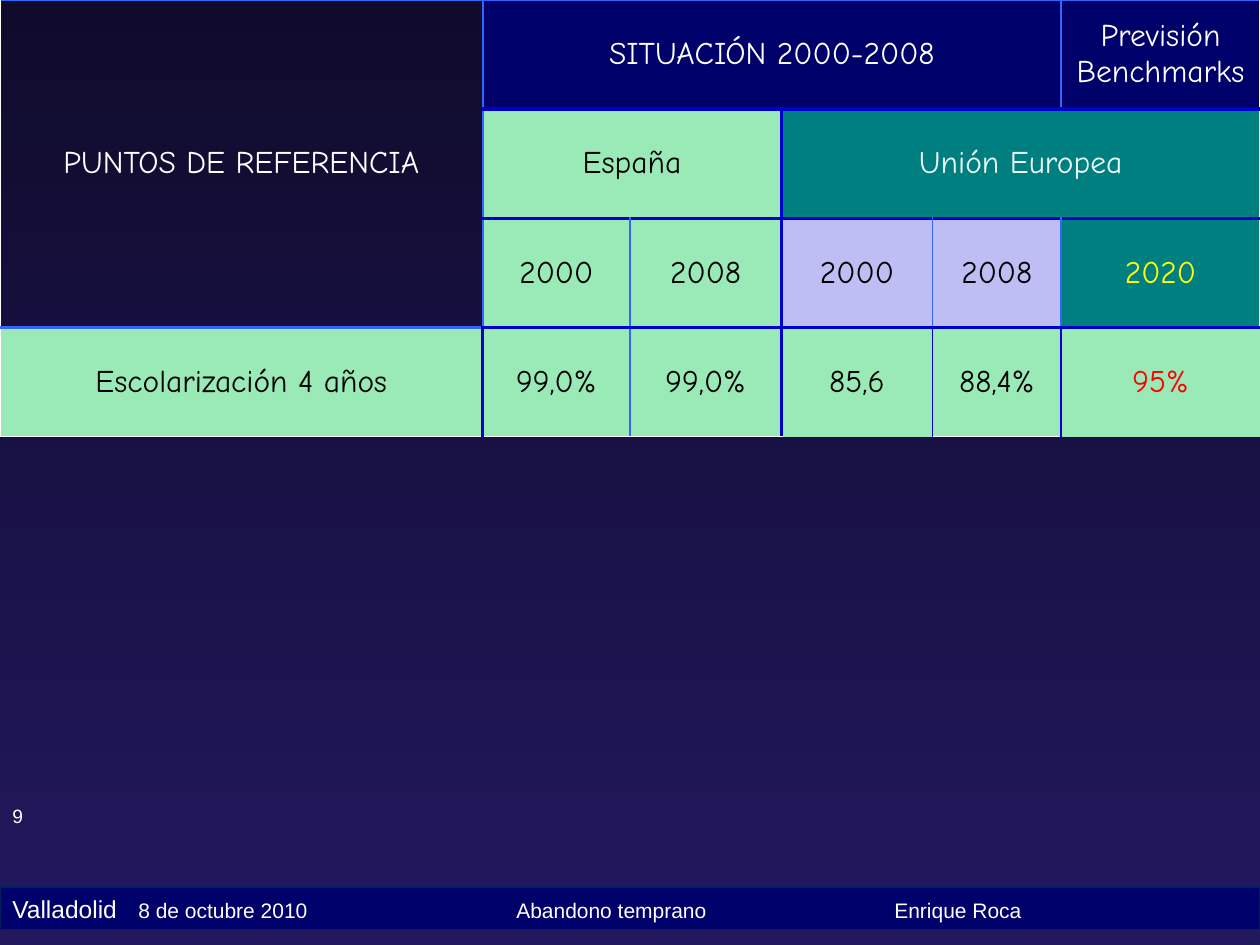
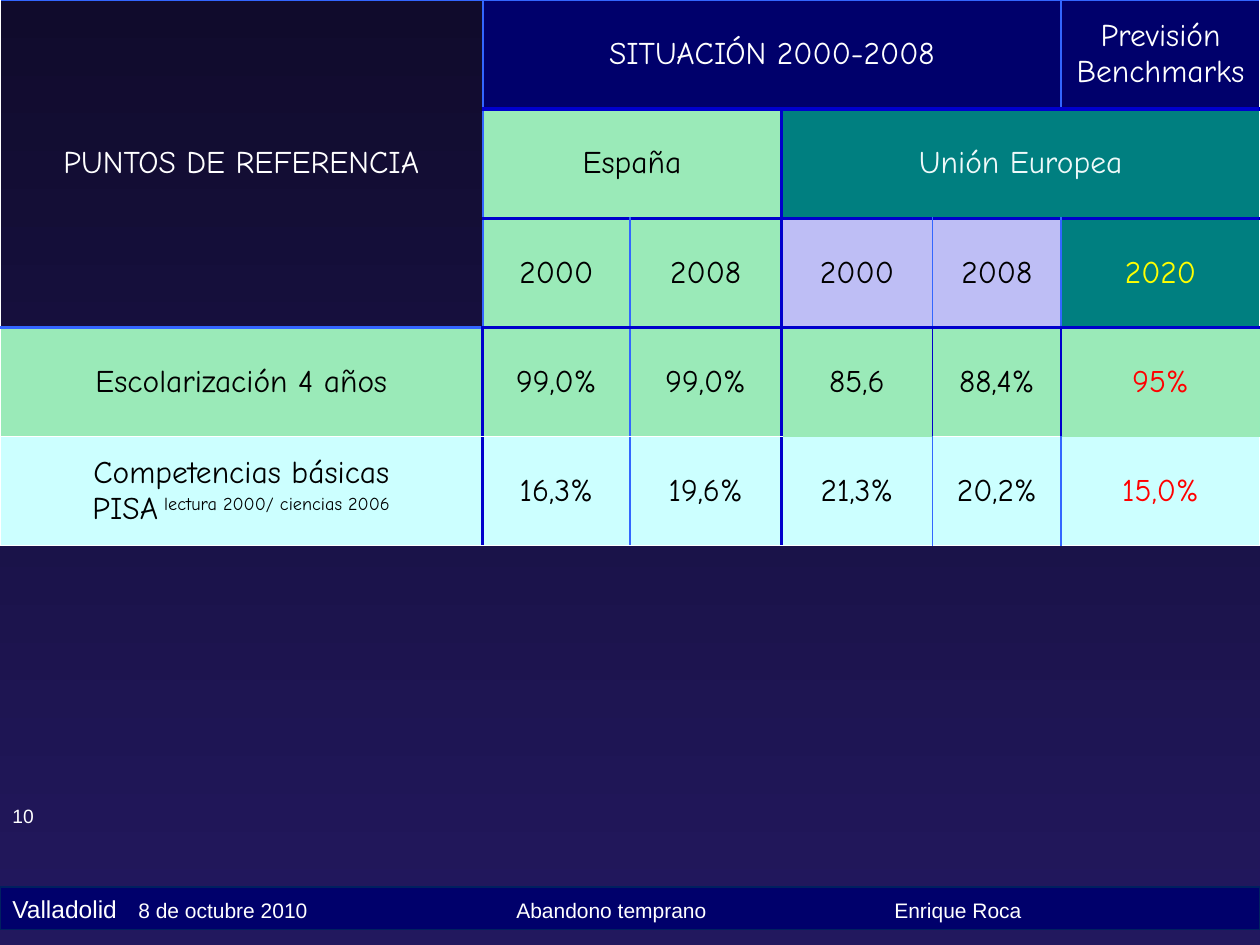
import dataclasses

import lxml.etree
import pptx
import pptx.dml.color
import pptx.enum.shapes
import pptx.enum.text
import pptx.oxml.ns
import pptx.util

Cm = pptx.util.Cm
Pt = pptx.util.Pt
Align = pptx.enum.text.PP_ALIGN
Anchor = pptx.enum.text.MSO_ANCHOR


@dataclasses.dataclass(frozen=True)
class Theme:
    night_top: str = "100B2C"
    night_bottom: str = "22185E"
    navy: str = "00006B"
    band_edge: str = "002060"
    green: str = "9AEAB8"
    teal: str = "007F80"
    lilac: str = "BEBEF5"
    ice: str = "CCFFFF"
    azure: str = "3366FF"
    blue: str = "0000CC"
    white: str = "FFFFFF"
    pale: str = "EEF9F9"
    black: str = "000000"
    yellow: str = "FFFF00"
    red: str = "FF0000"
    sans: str = "Arial"
    comic: str = "Comic Neue"
    table_size: int = 18
    place_size: int = 14
    footer_size: int = 12
    number_size: int = 11


THEME = Theme()


@dataclasses.dataclass(frozen=True)
class Entry:
    """Table cell content; each line is a list of (text, is_superscript) runs."""
    row: int
    col: int
    lines: list
    fill: str = None
    ink: str = THEME.black
    rows: int = 1
    cols: int = 1


PENS = {
    "W": (THEME.white, 1),
    "A": (THEME.azure, 1.5),
    "a": (THEME.azure, 1),
    "B": (THEME.blue, 2.25),
    "b": (THEME.blue, 1),
    "-": None,
}
# One letter per grid line: vertical lines by row, horizontal lines by column.
VERTICALS = ["WA---AW", "WA-B--W", "WAaBaAW", "WBaBbb-", "WBaBaAW"]
HORIZONTALS = ["AAAAAA", "-BBBBB", "-BBBBB", "ABBBBB", "WWW-W-", "WWWWWW"]

COLUMN_WIDTHS = [9.73, 2.97, 3.05, 3.05, 2.59, 4.01]
ROW_HEIGHT = 2.2


def plain(*lines):
    return [[(line, False)] for line in lines]


HEADINGS = [
    Entry(0, 0, plain("PUNTOS DE REFERENCIA"), ink=THEME.white, rows=3),
    Entry(0, 1, plain("SITUACIÓN 2000-2008"), THEME.navy, THEME.white, cols=4),
    Entry(0, 5, plain("Previsión", "Benchmarks"), THEME.navy, THEME.white),
    Entry(1, 1, plain("España"), THEME.green, cols=2),
    Entry(1, 3, plain("Unión Europea"), THEME.teal, THEME.pale, cols=3),
    Entry(2, 1, plain("2000"), THEME.green),
    Entry(2, 2, plain("2008"), THEME.green),
    Entry(2, 3, plain("2000"), THEME.lilac),
    Entry(2, 4, plain("2008"), THEME.lilac),
    Entry(2, 5, plain("2020"), THEME.teal, THEME.yellow),
]


def indicator(row, label, values, fill):
    """Entries of one indicator row, with the 2020 target in red."""
    inks = [THEME.black] * (len(values) - 1) + [THEME.red]
    return [Entry(row, 0, label, fill)] + [
        Entry(row, col, plain(value), fill, ink)
        for col, (value, ink) in enumerate(zip(values, inks), start=1)
    ]


SCHOOLING = indicator(
    3, plain("Escolarización 4 años"),
    ["99,0%", "99,0%", "85,6", "88,4%", "95%"], THEME.green)
BASIC_SKILLS = indicator(
    4, plain("Competencias básicas")
    + [[("PISA", False), (" lectura 2000/ ciencias 2006", True)]],
    ["16,3%", "19,6%", "21,3%", "20,2%", "15,0%"], THEME.ice)


def rgb(colour):
    return pptx.dml.color.RGBColor.from_string(colour)


def add_text(paragraph, text, *, size, font=THEME.sans, ink=THEME.white,
             superscript=False):
    run = paragraph.add_run()
    run.text = text
    run.font.size = Pt(size)
    run.font.name = font
    run.font.color.rgb = rgb(ink)
    if superscript:
        run.font._element.set("baseline", "30000")


def add_element(parent, tag, **attributes):
    return lxml.etree.SubElement(
        parent, pptx.oxml.ns.qn(tag),
        {key: str(value) for key, value in attributes.items()})


def set_tab_stops(paragraph, positions):
    stops = add_element(paragraph._p.get_or_add_pPr(), "a:tabLst")
    for position in positions:
        add_element(stops, "a:tab", pos=int(Cm(position)), algn="l")


def set_borders(cell, pens):
    """Draw the left, right, top and bottom lines; must precede the fill."""
    properties = cell._tc.get_or_add_tcPr()
    for side, pen in zip("LRTB", pens):
        if pen is None:
            add_element(add_element(properties, f"a:ln{side}", w=0), "a:noFill")
            continue
        colour, width = pen
        line = add_element(properties, f"a:ln{side}", w=int(Pt(width)))
        add_element(add_element(line, "a:solidFill"), "a:srgbClr", val=colour)


def fill_entry(table, entry):
    cell = table.cell(entry.row, entry.col)
    cell.vertical_anchor = Anchor.MIDDLE
    cell.margin_left = cell.margin_right = Cm(0.08)
    cell.margin_top = cell.margin_bottom = 0
    for index, line in enumerate(entry.lines):
        frame = cell.text_frame
        paragraph = frame.add_paragraph() if index else frame.paragraphs[0]
        paragraph.alignment = Align.CENTER
        for text, superscript in line:
            add_text(paragraph, text, size=THEME.table_size, font=THEME.comic,
                     ink=entry.ink, superscript=superscript)


def paint_entry(table, entry):
    """Set borders and fill on every grid cell that the entry covers."""
    for row in range(entry.row, entry.row + entry.rows):
        for col in range(entry.col, entry.col + entry.cols):
            cell = table.cell(row, col)
            letters = (VERTICALS[row][col],
                       VERTICALS[row][col + cell.span_width],
                       HORIZONTALS[row][col],
                       HORIZONTALS[row + cell.span_height][col])
            set_borders(cell, [PENS[letter] for letter in letters])
            if entry.fill:
                cell.fill.solid()
                cell.fill.fore_color.rgb = rgb(entry.fill)
            else:
                cell.fill.background()


def add_benchmarks(slide, left, top, entries):
    row_count = max(entry.row + entry.rows for entry in entries)
    table = slide.shapes.add_table(
        row_count, len(COLUMN_WIDTHS), Cm(left), Cm(top),
        Cm(sum(COLUMN_WIDTHS)), Cm(ROW_HEIGHT * row_count)).table
    table.first_row = table.horz_banding = False
    for column, width in zip(table.columns, COLUMN_WIDTHS):
        column.width = Cm(width)
    for row in table.rows:
        row.height = Cm(ROW_HEIGHT)
    for entry in entries:
        if entry.rows * entry.cols > 1:
            table.cell(entry.row, entry.col).merge(table.cell(
                entry.row + entry.rows - 1, entry.col + entry.cols - 1))
        fill_entry(table, entry)
        paint_entry(table, entry)


def add_page_number(slide, left, top, width, height, number):
    frame = slide.shapes.add_textbox(
        Cm(left), Cm(top), Cm(width), Cm(height)).text_frame
    frame.word_wrap = True
    add_text(frame.paragraphs[0], str(number), size=THEME.number_size)


def add_footer(slide, left, top, width, height):
    band = slide.shapes.add_shape(
        pptx.enum.shapes.MSO_SHAPE.RECTANGLE,
        Cm(left), Cm(top), Cm(width), Cm(height))
    band.shadow.inherit = False
    band.fill.solid()
    band.fill.fore_color.rgb = rgb(THEME.navy)
    band.line.color.rgb = rgb(THEME.band_edge)
    band.line.width = Pt(0.75)
    band.text_frame.word_wrap = True
    paragraph = band.text_frame.paragraphs[0]
    paragraph.alignment = Align.LEFT
    set_tab_stops(paragraph, [width * tenths / 10 for tenths in (1, 4, 7)])
    add_text(paragraph, "Valladolid\t", size=THEME.place_size)
    add_text(paragraph, "8 de octubre 2010\tAbandono temprano\tEnrique Roca",
             size=THEME.footer_size)


def set_background(master):
    fill = master.background.fill
    fill.gradient()
    fill.gradient_angle = 270
    for stop, colour in zip(fill.gradient_stops,
                            (THEME.night_top, THEME.night_bottom)):
        stop.color.rgb = rgb(colour)


def add_benchmark_slide(deck, number, indicators):
    slide = deck.slides.add_slide(deck.slide_layouts[6])
    add_page_number(slide, 0, 16.08, 1.2, 0.74, number)
    add_footer(slide, 0, 17.88, 25.4, 0.86)
    add_benchmarks(slide, 0, 0, HEADINGS + indicators)


def main():
    deck = pptx.Presentation()
    deck.slide_width = Cm(25.4)
    deck.slide_height = Cm(19.05)
    set_background(deck.slide_master)
    add_benchmark_slide(deck, 9, SCHOOLING)
    add_benchmark_slide(deck, 10, SCHOOLING + BASIC_SKILLS)
    deck.save("out.pptx")


if __name__ == "__main__":
    main()
